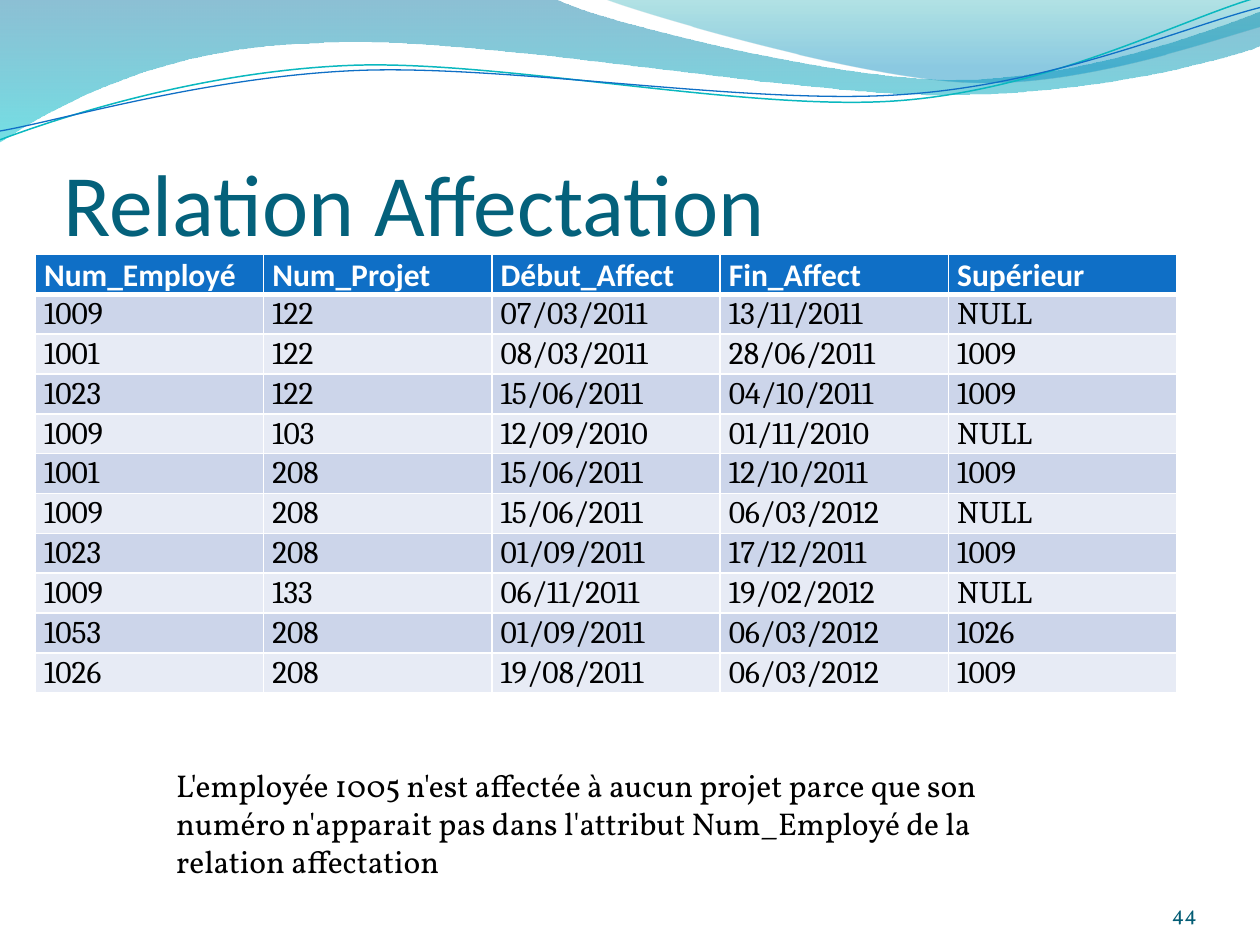
"""Build the slide about the relation Affectation."""
from lxml.etree import SubElement
from pptx import Presentation
from pptx.dml.color import RGBColor
from pptx.enum.text import MSO_ANCHOR, MSO_AUTO_SIZE, PP_ALIGN
from pptx.oxml.ns import qn
from pptx.util import Inches, Pt

HEAD = ["Num_Employé", "Num_Projet", "Début_Affect", "Fin_Affect", "Supérieur"]
ROWS = [
    ["1009", "122", "07/03/2011", "13/11/2011", "NULL"],
    ["1001", "122", "08/03/2011", "28/06/2011", "1009"],
    ["1023", "122", "15/06/2011", "04/10/2011", "1009"],
    ["1009", "103", "12/09/2010", "01/11/2010", "NULL"],
    ["1001", "208", "15/06/2011", "12/10/2011", "1009"],
    ["1009", "208", "15/06/2011", "06/03/2012", "NULL"],
    ["1023", "208", "01/09/2011", "17/12/2011", "1009"],
    ["1009", "133", "06/11/2011", "19/02/2012", "NULL"],
    ["1053", "208", "01/09/2011", "06/03/2012", "1026"],
    ["1026", "208", "19/08/2011", "06/03/2012", "1009"],
]
NOTE = ("L'employée 1005 n'est affectée à aucun projet parce que son numéro "
        "n'apparait pas dans l'attribut Num_Employé de la relation affectation")
WAVE = [(0, 0), (4.4, -0.01), (4.76, 0.17, 6.64, 0.63, 7.58, 0.63),
        (8.53, 0.63, 9.58, 0.26, 10, 0.09), (10.01, 0.36),
        (9.83, 0.44, 8.7, 0.76, 7.46, 0.75), (6.22, 0.75, 3.82, 0.28, 2.57, 0.34),
        (1.29, 0.36, 0.46, 0.83, -0.01, 1.13)]
CREST = [(4.79, -0.01), (5.09, 0.11, 6.82, 0.62, 7.69, 0.65),
         (8.56, 0.69, 9.61, 0.32, 10, 0.21), (10, 0)]
TEAL = [(0, 1.11), (0.48, 0.93, 1.58, 0.57, 2.77, 0.52),
        (3.95, 0.47, 5.93, 0.89, 7.13, 0.8), (8.33, 0.71, 9.38, 0.15, 9.98, -0.02)]
BLUE = [(0, 1.04), (0.47, 0.96, 1.64, 0.61, 2.83, 0.56),
        (4.03, 0.51, 5.97, 0.84, 7.17, 0.75), (8.36, 0.67, 9.41, 0.21, 10, 0.06)]


def tint(code):
    """Turn a hex string into a colour."""
    return RGBColor.from_string(code)


def write(frame, text, size=18, font="Vollkorn", color="000000", bold=False,
          align=PP_ALIGN.LEFT, space=None):
    """Put one formatted paragraph into a text frame."""
    para = frame.paragraphs[0]
    para.alignment = align
    para.line_spacing = space
    run = para.add_run()
    run.text = text
    run.font.size, run.font.name, run.font.bold = Pt(size), font, bold
    run.font.color.rgb = tint(color)


def bend(shape, curve):
    """Turn the segments that have control points into Bézier parts."""
    for step, part in zip(list(shape._element.iter(qn("a:lnTo"))), curve[1:]):
        if len(part) == 6:
            step.tag = qn("a:cubicBezTo")
            step.clear()
            for x, y in zip(part[::2], part[1::2]):
                SubElement(step, qn("a:pt"), x=str(Inches(x) - shape.left),
                           y=str(Inches(y) - shape.top))


class Deck:
    """Hold the style and the current slide."""
    accent = "0F6FC6"
    bands = ["CCD5EA", "E7EBF5"]

    def __init__(self):
        """Start a deck with one titled slide."""
        self.file = Presentation()
        self.file.slide_width, self.file.slide_height = Inches(10), Inches(7.5)
        self.slide = self.file.slides.add_slide(self.file.slide_layouts[5])
        self.shapes = self.slide.shapes

    def outline(self, curve, closed):
        """Draw a curved outline."""
        points = [tuple(map(Inches, part[-2:])) for part in curve]
        pen = self.shapes.build_freeform(*points[0])
        pen.add_line_segments(points[1:], close=closed)
        shape = pen.convert_to_shape()
        bend(shape, curve)
        shape.shadow.inherit = False
        return shape

    def wave(self, curve, stops):
        """Draw a closed shape with a sheer downward gradient."""
        shape = self.outline(curve, True)
        shape.line.fill.background()
        shape.fill.gradient()
        shape.fill.gradient_angle = 270
        for stop, (place, color, _) in zip(shape.fill.gradient_stops, stops):
            stop.position, stop.color.rgb = place, tint(color)
        marks = list(shape._element.iter(qn("a:srgbClr")))
        for mark, (_, _, alpha) in zip(marks, stops):
            SubElement(mark, qn("a:alpha"), val=str(alpha * 1000))

    def strand(self, curve, color, width):
        """Draw an open curved line."""
        shape = self.outline(curve, False)
        shape.fill.background()
        shape.line.color.rgb, shape.line.width = tint(color), Pt(width)

    def title(self, text, box):
        """Fill the title and bring it to the front."""
        shape = self.shapes.title
        shape.left, shape.top, shape.width, shape.height = map(Inches, box)
        frame = shape.text_frame
        frame.auto_size = MSO_AUTO_SIZE.NONE
        frame.vertical_anchor = MSO_ANCHOR.BOTTOM
        frame.margin_left = frame.margin_right = frame.margin_bottom = 0
        write(frame, text, size=50, font="Calibri", color="04617B")
        self.shapes._spTree.append(shape._element)

    def label(self, text, box, inset=None, anchor=MSO_ANCHOR.TOP, **style):
        """Add a text box."""
        frame = self.shapes.add_textbox(*map(Inches, box)).text_frame
        frame.word_wrap = True
        frame.vertical_anchor = anchor
        if inset is not None:
            frame.margin_left = frame.margin_right = Inches(inset)
            frame.margin_top = frame.margin_bottom = Inches(inset)
        write(frame, text, **style)

    def border(self, cell, side, width):
        """Draw a white line on one side of a cell."""
        line = SubElement(cell._tc.get_or_add_tcPr(), qn(f"a:ln{side}"),
                          w=str(Pt(width)))
        SubElement(SubElement(line, qn("a:solidFill")), qn("a:srgbClr"), val="FFFFFF")

    def table(self, rows, box):
        """Add a banded table whose first row is the head."""
        grid = self.shapes.add_table(len(rows), len(rows[0]), *map(Inches, box)).table
        for y, row in enumerate(rows):
            head = y == 0
            look = {"font": "Calibri", "color": "FFFFFF", "bold": True} if head else {
                "font": "Cambria"}
            for x, text in enumerate(row):
                cell = grid.cell(y, x)
                cell.margin_left = cell.margin_right = Inches(0.07)
                cell.margin_top = cell.margin_bottom = 0
                for side in "LRTB":
                    thick = (y, side) in [(0, "B"), (1, "T")]
                    self.border(cell, side, 3 if thick else 1)
                cell.fill.solid()
                cell.fill.fore_color.rgb = tint(
                    self.accent if head else self.bands[(y - 1) % 2])
                write(cell.text_frame, text, space=1.05, **look)


def main():
    """Build and save the deck."""
    deck = Deck()
    deck.wave(WAVE, [(0, "0074A1", 45), (1, "00C6CF", 55)])
    deck.wave(CREST, [(0, "00A1A9", 30), (0.8, "008BBF", 45)])
    deck.strand(TEAL, "0AB8BF", 0.85)
    deck.strand(BLUE, deck.accent, 0.75)
    deck.title("Relation Affectation", (0.5, 0.77, 9, 1.25))
    deck.label("44", (8.67, 6.95, 0.83, 0.4), inset=0, anchor=MSO_ANCHOR.BOTTOM,
               size=12, color="045D75", align=PP_ALIGN.RIGHT)
    deck.table([HEAD, *ROWS], (0.28, 2.02, 9.06, 3.48))
    deck.label(NOTE, (1.3, 6.03, 7.01, 1.01))
    deck.file.save("out.pptx")


if __name__ == "__main__":
    main()
